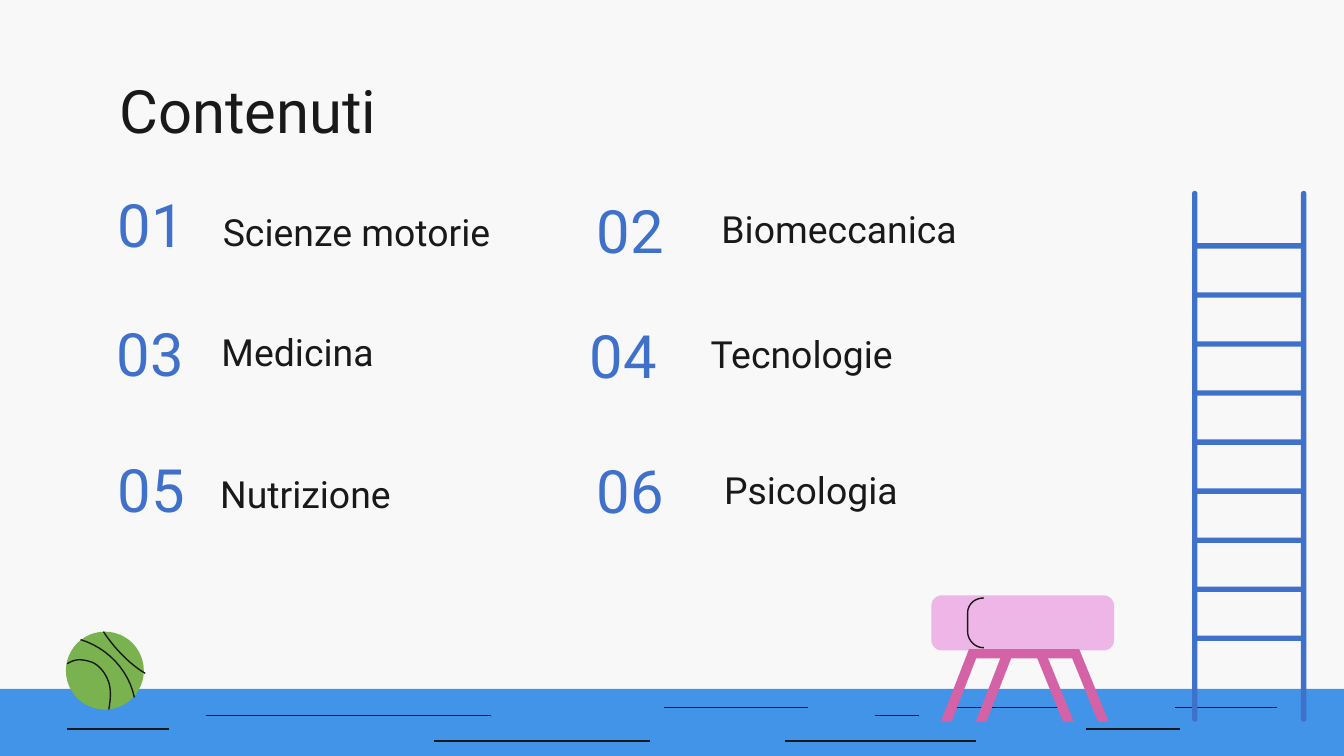
from dataclasses import dataclass

from lxml import etree
from pptx import Presentation
from pptx.dml.color import RGBColor
from pptx.enum.shapes import MSO_CONNECTOR as Connector
from pptx.enum.shapes import MSO_SHAPE as Shape
from pptx.enum.text import MSO_ANCHOR as Anchor
from pptx.oxml.ns import qn
from pptx.util import Inches, Pt

PAPER = RGBColor(0xF8, 0xF8, 0xF8)
INK = RGBColor(0x19, 0x19, 0x19)
BLUE = RGBColor(0x3F, 0x71, 0xCB)
FLOOR = RGBColor(0x41, 0x94, 0xE7)
PINK = RGBColor(0xEE, 0xB6, 0xE7)
MAGENTA = RGBColor(0xD4, 0x62, 0xA7)
GREEN = RGBColor(0x79, 0xB2, 0x4E)

Point = tuple[float, float]
THIN = 0.75  # points, for every fine ink line


@dataclass(frozen=True)
class TextStyle:
    width: float
    height: float
    size: int
    color: RGBColor
    anchor: Anchor


@dataclass(frozen=True)
class Topic:
    number: str
    number_at: Point
    label: str
    label_at: Point


@dataclass(frozen=True)
class FloorLine:
    left: float
    right: float
    y: float


HEADING = TextStyle(8.43, 0.7, 32, INK, Anchor.TOP)
NUMBER = TextStyle(0.9, 0.65, 32, BLUE, Anchor.MIDDLE)
LABEL = TextStyle(2.6, 0.5, 20, INK, Anchor.BOTTOM)

TOPICS = [
    Topic("01", (0.78, 1.34), "Scienze motorie", (1.56, 1.49)),
    Topic("02", (4.34, 1.38), "Biomeccanica", (5.27, 1.47)),
    Topic("03", (0.77, 2.3), "Medicina", (1.55, 2.38)),
    Topic("04", (4.29, 2.31), "Tecnologie", (5.19, 2.4)),
    Topic("05", (0.78, 3.31), "Nutrizione", (1.54, 3.44)),
    Topic("06", (4.34, 3.32), "Psicologia", (5.29, 3.41)),
]

FLOOR_LINES = [
    FloorLine(7.08, 7.95, 5.26),
    FloorLine(8.08, 8.78, 5.42),
    FloorLine(8.74, 9.5, 5.26),
    FloorLine(5.84, 7.26, 5.51),
    FloorLine(6.51, 6.84, 5.32),
    FloorLine(4.94, 6.01, 5.26),
    FloorLine(1.53, 3.65, 5.32),
    FloorLine(3.23, 4.84, 5.51),
    FloorLine(0.5, 1.26, 5.42),
]

# Bezier chains: a start point, then two handles and an end point per segment
VAULT_SEAM = [(7.32, 4.45), (7.25, 4.45), (7.2, 4.5), (7.2, 4.56),
              (7.2, 4.6), (7.2, 4.66), (7.2, 4.7),
              (7.2, 4.76), (7.25, 4.82), (7.32, 4.82)]
BALL_SEAMS = [
    [(0.5, 4.94), (0.53, 4.92), (0.56, 4.91), (0.59, 4.91),
     (0.63, 4.91), (0.66, 4.92), (0.69, 4.93),
     (0.75, 4.96), (0.79, 5.02), (0.81, 5.08),
     (0.83, 5.15), (0.82, 5.21), (0.81, 5.28)],
    [(0.6, 4.76), (0.8, 4.82), (0.96, 4.99), (1, 5.19)],
    [(0.77, 4.7), (0.84, 4.81), (0.96, 4.94), (1.08, 5.01)],
]


def add_text(page, text: str, at: Point, style: TextStyle) -> None:
    box = page.shapes.add_textbox(*map(Inches, (*at, style.width, style.height)))
    frame_format = {"word_wrap": True, "vertical_anchor": style.anchor}
    frame_format |= {f"margin_{side}": Inches(0.1) for side in ("left", "top", "right", "bottom")}
    for name, value in frame_format.items():
        setattr(box.text_frame, name, value)
    span = box.text_frame.paragraphs[0].add_run()
    span.text = text
    for name, value in {"name": "Roboto", "size": Pt(style.size)}.items():
        setattr(span.font, name, value)
    span.font.color.rgb = style.color


def paint(shape, color: RGBColor) -> None:
    shape.shadow.inherit = False
    shape.fill.solid()
    shape.fill.fore_color.rgb = color
    shape.line.fill.background()


def add_block(page, kind: Shape, left: float, top: float, width: float, height: float,
              color: RGBColor, rounding: float | None = None) -> None:
    block = page.shapes.add_shape(kind, *map(Inches, (left, top, width, height)))
    paint(block, color)
    if rounding is not None:
        block.adjustments[0] = rounding


def add_outline(page, points: list[Point], close: bool):
    corners = [(Inches(x), Inches(y)) for x, y in points]
    builder = page.shapes.build_freeform(*corners[0])
    builder.add_line_segments(corners[1:], close=close)
    return builder.convert_to_shape()


def bezier(a: Point, b: Point, c: Point, d: Point, t: float) -> Point:
    u = 1 - t
    weights = (u**3, 3 * u * u * t, 3 * u * t * t, t**3)
    return tuple(sum(w * p[axis] for w, p in zip(weights, (a, b, c, d))) for axis in (0, 1))


def add_curve(page, chain: list[Point], steps: int = 12) -> None:
    points = [chain[0]]
    for start in range(0, len(chain) - 1, 3):
        points += [bezier(*chain[start:start + 4], step / steps) for step in range(1, steps + 1)]
    curve = add_outline(page, points, close=False)
    curve.shadow.inherit = False
    curve.fill.background()
    curve.line.color.rgb = INK
    curve.line.width = Pt(THIN)


def add_floor_line(page, mark: FloorLine) -> None:
    y = mark.y + 0.005
    line = page.shapes.add_connector(Connector.STRAIGHT, *map(Inches, (mark.left, y, mark.right, y)))
    line.line.color.rgb = INK
    line.line.width = Pt(THIN)
    etree.SubElement(line._element.spPr, qn("a:effectLst"))


def add_ladder(page) -> None:
    first, last, count = 1.81, 4.73, 9
    pitch = (last - first) / (count - 1)
    for index in range(count):
        add_block(page, Shape.RECTANGLE, 8.9, first + index * pitch, 0.79, 0.04, BLUE)
    for left in (8.87, 9.68):
        add_block(page, Shape.ROUNDED_RECTANGLE, left, 1.42, 0.04, 3.95, BLUE, 0.5)


def add_vault(page) -> None:
    add_block(page, Shape.ROUNDED_RECTANGLE, 6.93, 4.43, 1.36, 0.41, PINK, 0.19)
    add_curve(page, VAULT_SEAM)
    add_block(page, Shape.RECTANGLE, 7.23, 4.83, 0.78, 0.07, MAGENTA)
    top, bottom, thickness = 4.83, 5.37, 0.08
    for head, foot in ((7.21, 7), (7.47, 7.26), (7.69, 7.91), (7.95, 8.17)):
        leg = [(head, top), (foot, bottom), (foot + thickness, bottom), (head + thickness, top)]
        paint(add_outline(page, leg, close=True), MAGENTA)


def add_ball(page) -> None:
    add_block(page, Shape.OVAL, 0.49, 4.7, 0.58, 0.58, GREEN)
    for seam in BALL_SEAMS:
        add_curve(page, seam)


def main() -> None:
    deck = Presentation()
    deck.slide_width, deck.slide_height = Inches(10), Inches(5.625)
    page = deck.slides.add_slide(deck.slide_layouts[6])
    page.background.fill.solid()
    page.background.fill.fore_color.rgb = PAPER

    # Gym floor
    add_block(page, Shape.RECTANGLE, 0, 5.125, 10, 0.5, FLOOR)
    for mark in FLOOR_LINES:
        add_floor_line(page, mark)

    # Heading and topics
    add_text(page, "Contenuti", (0.79, 0.45), HEADING)
    for topic in TOPICS:
        add_text(page, topic.number, topic.number_at, NUMBER)
        add_text(page, topic.label, topic.label_at, LABEL)

    # Gym equipment
    add_ladder(page)
    add_vault(page)
    add_ball(page)

    deck.save("out.pptx")


if __name__ == "__main__":
    main()
